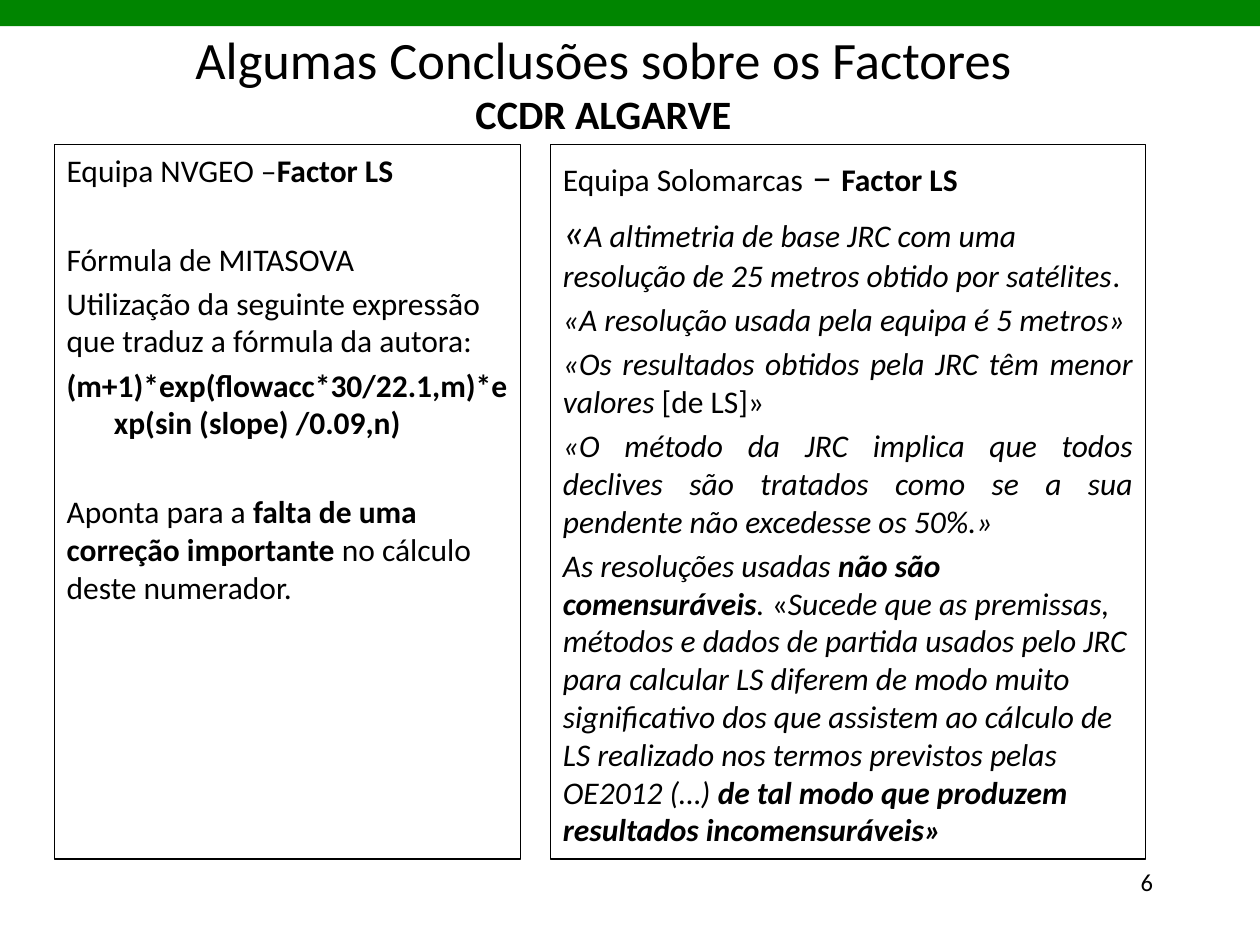
from dataclasses import dataclass

from pptx import Presentation
from pptx.dml.color import RGBColor
from pptx.enum.shapes import MSO_SHAPE
from pptx.enum.text import MSO_ANCHOR, PP_ALIGN
from pptx.util import Pt


@dataclass(frozen=True)
class Theme:
    font: str = "Calibri"
    ink: RGBColor = RGBColor(0x00, 0x00, 0x00)
    band: RGBColor = RGBColor(0x00, 0x85, 0x00)
    title: int = 30
    subtitle: int = 23
    body: int = 18
    quote: int = 24
    number: int = 14
    border: float = 0.75
    gap: float = 3.6
    section_gap: float = 29
    hang: int = 27


THEME = Theme()


@dataclass
class Phrase:
    """A stretch of text in one style."""
    text: str
    bold: bool = False
    italic: bool = False
    size: int = THEME.body


@dataclass
class Para:
    phrases: list
    align: PP_ALIGN = PP_ALIGN.LEFT
    hanging: bool = False
    before: float = THEME.gap


def add_text(slide, box, paras, anchor=MSO_ANCHOR.TOP):
    region = slide.shapes.add_textbox(*map(Pt, box))
    frame = region.text_frame
    frame.word_wrap = True
    frame.vertical_anchor = anchor
    for index, para in enumerate(paras):
        paragraph = frame.add_paragraph() if index else frame.paragraphs[0]
        paragraph.alignment = para.align
        paragraph.space_before = Pt(para.before if index else 0)
        if para.hanging:
            properties = paragraph._p.get_or_add_pPr()
            properties.set("marL", str(Pt(THEME.hang)))
            properties.set("indent", str(-Pt(THEME.hang)))
        for phrase in para.phrases:
            run = paragraph.add_run()
            run.text = phrase.text
            run.font.name = THEME.font
            run.font.size = Pt(phrase.size)
            run.font.bold = phrase.bold
            run.font.italic = phrase.italic
            run.font.color.rgb = THEME.ink
    return region


def add_band(slide, box):
    band = slide.shapes.add_shape(MSO_SHAPE.RECTANGLE, *map(Pt, box))
    band.shadow.inherit = False
    band.fill.solid()
    band.fill.fore_color.rgb = THEME.band
    band.line.fill.background()


def add_heading(slide, box):
    add_text(slide, box, [
        Para([Phrase("Algumas Conclusões sobre os Factores", size=THEME.title)],
             PP_ALIGN.CENTER),
        Para([Phrase("CCDR ALGARVE", bold=True, size=THEME.subtitle)],
             PP_ALIGN.CENTER, before=0),
    ], MSO_ANCHOR.MIDDLE)


def add_team_panel(slide, box, paras):
    panel = add_text(slide, box, paras)
    panel.line.color.rgb = THEME.ink
    panel.line.width = Pt(THEME.border)


def add_page_number(slide, box, number):
    add_text(slide, box, [Para([Phrase(number, size=THEME.number)], PP_ALIGN.RIGHT)])


FORMULA_TEAM = [
    Para([Phrase("Equipa NVGEO –"), Phrase("Factor LS", bold=True)], hanging=True),
    Para([Phrase("Fórmula de MITASOVA")], hanging=True, before=THEME.section_gap),
    Para([Phrase("Utilização da seguinte expressão que traduz a fórmula da autora:")]),
    Para([Phrase("(m+1)*exp(flowacc*30/22.1,m)*exp(sin (slope) /0.09,n)", bold=True)],
         hanging=True),
    Para([Phrase("Aponta para a "),
          Phrase("falta de uma correção importante ", bold=True),
          Phrase("no cálculo deste numerador.")], before=THEME.section_gap),
]

RESOLUTION_TEAM = [
    Para([Phrase("Equipa Solomarcas"), Phrase(" – ", size=THEME.subtitle),
          Phrase("Factor LS", bold=True)], hanging=True),
    Para([Phrase("«", italic=True, size=THEME.quote),
          Phrase("A altimetria de base JRC com uma resolução de 25 metros "
                 "obtido por satélites", italic=True),
          Phrase(".")]),
    Para([Phrase("«A resolução usada pela equipa é 5 metros»", italic=True)],
         PP_ALIGN.JUSTIFY),
    Para([Phrase("«Os resultados obtidos pela JRC têm menor valores ", italic=True),
          Phrase("[de LS]»")], PP_ALIGN.JUSTIFY),
    Para([Phrase("«O método da JRC implica que todos declives são tratados como "
                 "se a sua pendente não excedesse os 50%.»", italic=True)],
         PP_ALIGN.JUSTIFY),
    Para([Phrase("As resoluções usadas ", italic=True),
          Phrase("não são comensuráveis", bold=True, italic=True),
          Phrase(". ", italic=True),
          Phrase("«"),
          Phrase("Sucede que as premissas, métodos e dados de partida usados pelo "
                 "JRC para calcular LS diferem de modo muito significativo dos que "
                 "assistem ao cálculo de LS realizado nos termos previstos pelas "
                 "OE2012 (…) ", italic=True),
          Phrase("de tal modo que produzem resultados incomensuráveis»",
                 bold=True, italic=True)]),
]


def main():
    deck = Presentation()
    deck.slide_width, deck.slide_height = Pt(720), Pt(540)
    slide = deck.slides.add_slide(deck.slide_layouts[6])

    # Top band and heading
    add_band(slide, (0, 0, 720, 15))
    add_heading(slide, (39, 2, 612, 90))

    # One panel for each team, on a shared top and height
    panel_top, panel_height = 82.8, 408.2
    for left, width, paras in ((31, 266.4, FORMULA_TEAM),
                               (314.6, 340, RESOLUTION_TEAM)):
        add_team_panel(slide, (left, panel_top, width, panel_height), paras)

    # Page number
    add_page_number(slide, (516, 492, 150, 36), "6")

    deck.save("out.pptx")


if __name__ == "__main__":
    main()
